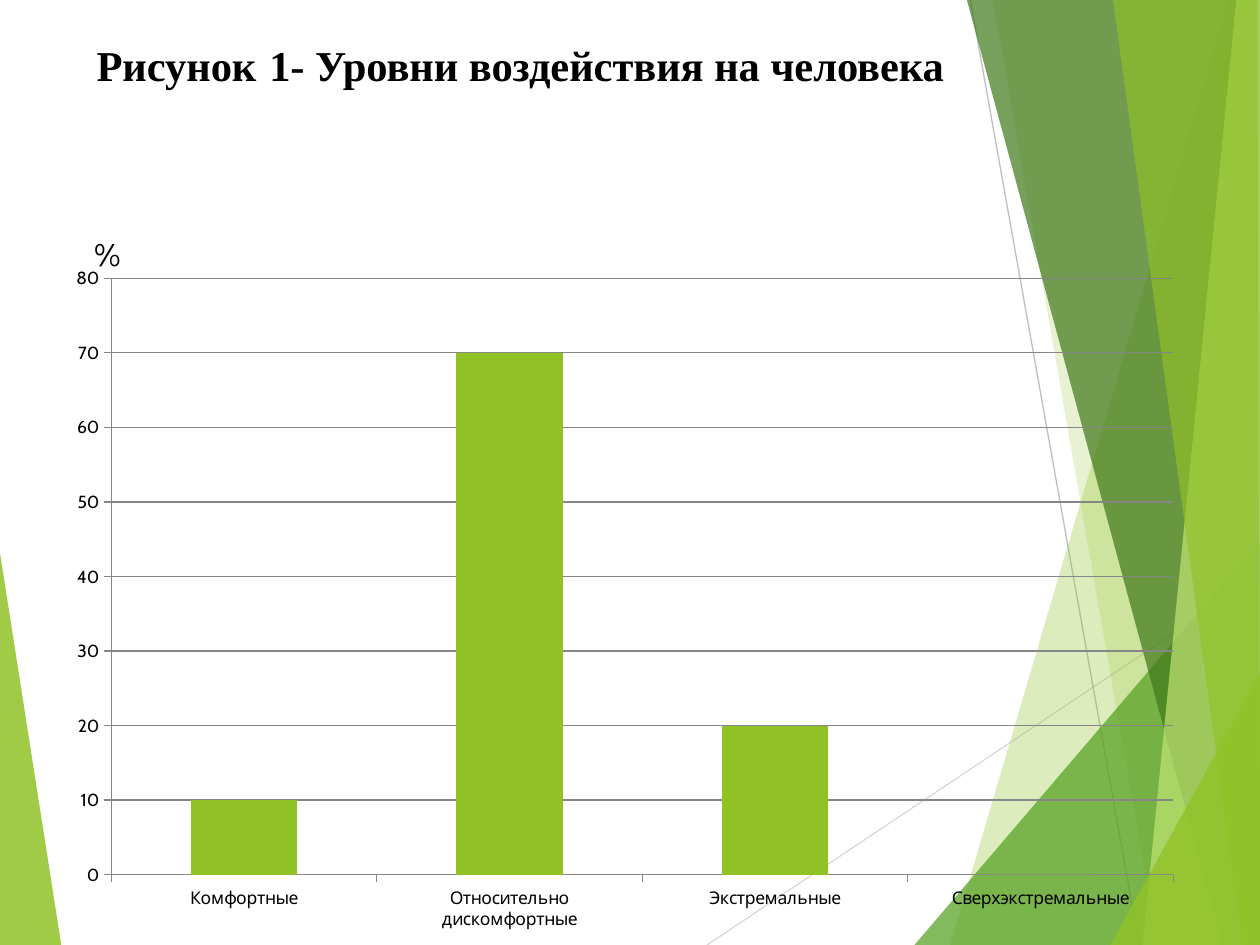
from lxml import etree
from pptx import Presentation
from pptx.chart.data import CategoryChartData
from pptx.dml.color import RGBColor
from pptx.enum.chart import XL_CHART_TYPE, XL_TICK_MARK
from pptx.enum.shapes import MSO_CONNECTOR
from pptx.enum.text import MSO_ANCHOR, MSO_AUTO_SIZE, PP_ALIGN
from pptx.oxml import parse_xml
from pptx.oxml.ns import nsdecls, qn
from pptx.util import Pt

WIDTH, HEIGHT = 720, 540
COLORS = {
    "lime": "90C226",
    "green": "54A021",
    "forest": "3F7819",
    "pale": "C0E474",
    "light_gray": "D9D9D9",
    "mid_gray": "BFBFBF",
    "axis": "868686",
    "text": "000000",
}

# Facets from back to front: corner points, colour, opacity in percent
LEFT_FACET = ([(0, 316), (35, HEIGHT), (0, HEIGHT)], "lime", 85)
RIGHT_FACETS = [
    ([(702, 0), (543, HEIGHT), (WIDTH, HEIGHT), (WIDTH, 0)], "lime", 30),
    ([(567.5, 0), (661.5, HEIGHT), (WIDTH, HEIGHT), (WIDTH, 0)], "lime", 20),
    ([(522.5, HEIGHT), (WIDTH, 309), (WIDTH, HEIGHT)], "green", 72),
    ([(552.5, 0), (698.5, HEIGHT), (WIDTH, HEIGHT), (WIDTH, 0)], "forest", 70),
    ([(706.5, 0), (653, HEIGHT), (WIDTH, HEIGHT), (WIDTH, 0)], "pale", 70),
    ([(636, 0), (710, HEIGHT), (WIDTH, HEIGHT), (718.5, 0)], "lime", 65),
    ([(634.5, HEIGHT), (WIDTH, 385), (WIDTH, HEIGHT)], "lime", 80),
]
RAYS = [
    ((404, HEIGHT), (WIDTH, 329), "light_gray"),
    ((554.5, 0), (651, HEIGHT), "mid_gray"),
]

TITLE_RUNS = [
    ("Рисунок", "Times New Roman", 24.3, "text", True),
    (" ", "Cabin", 32.4, "lime", False),
    ("1- Уровни воздействия на человека", "Times New Roman", 24.3, "text", True),
]
LEVELS = {
    "Комфортные": 10,
    "Относительно дискомфортные": 70,
    "Экстремальные": 20,
    "Сверхэкстремальные": 0,
}


def color(name):
    return RGBColor.from_string(COLORS[name])


def style_font(font, name, size, color_name, bold=False):
    font.name = name
    font.size = Pt(size)
    font.bold = bold
    font.color.rgb = color(color_name)


def add_facet(slide, points, color_name, opacity):
    corners = [(Pt(x), Pt(y)) for x, y in points]
    builder = slide.shapes.build_freeform(*corners[0])
    builder.add_line_segments(corners[1:], close=True)
    shape = builder.convert_to_shape()
    shape.shadow.inherit = False
    shape.line.fill.background()
    shape.fill.solid()
    shape.fill.fore_color.rgb = color(color_name)
    fill_color = shape.fill._xPr.find(qn("a:solidFill"))[0]
    etree.SubElement(fill_color, qn("a:alpha"), val=str(opacity * 1000))


def add_ray(slide, start, end, color_name):
    points = [Pt(value) for value in start + end]
    connector = slide.shapes.add_connector(MSO_CONNECTOR.STRAIGHT, *points)
    connector.line.color.rgb = color(color_name)
    connector.line.width = Pt(0.75)
    etree.SubElement(connector._element.spPr, qn("a:effectLst"))


def format_title(title):
    title.left, title.top, title.width, title.height = Pt(48), Pt(9), Pt(588), Pt(90)
    text_frame = title.text_frame
    text_frame.word_wrap = True
    text_frame.auto_size = MSO_AUTO_SIZE.NONE
    text_frame.vertical_anchor = MSO_ANCHOR.TOP
    text_frame.margin_top = Pt(5)
    paragraph = text_frame.paragraphs[0]
    paragraph.alignment = PP_ALIGN.LEFT
    for text, font_name, size, color_name, bold in TITLE_RUNS:
        run = paragraph.add_run()
        run.text = text
        style_font(run.font, font_name, size, color_name, bold)


def manual_layout(inner=False, **fractions):
    """Return a chart layout placed by fractions of the chart's size."""
    target = '<c:layoutTarget val="inner"/>' if inner else ""
    modes = '<c:xMode val="edge"/><c:yMode val="edge"/>'
    values = "".join(f'<c:{key} val="{value}"/>' for key, value in fractions.items())
    return parse_xml(
        f'<c:layout {nsdecls("c")}><c:manualLayout>{target}{modes}{values}'
        "</c:manualLayout></c:layout>"
    )


def format_axis(axis):
    axis.major_tick_mark = XL_TICK_MARK.OUTSIDE
    axis.minor_tick_mark = XL_TICK_MARK.NONE
    axis.format.line.color.rgb = color("axis")
    axis.format.line.width = Pt(0.75)
    style_font(axis.tick_labels.font, "Cabin", 10, "text")


def add_level_chart(slide):
    data = CategoryChartData()
    data.categories = list(LEVELS)
    data.add_series("%", list(LEVELS.values()))
    chart = slide.shapes.add_chart(
        XL_CHART_TYPE.COLUMN_STACKED, Pt(31), Pt(99), Pt(652.5), Pt(441), data
    ).chart
    chart.has_legend = False
    style_font(chart.font, "Cabin", 10, "text")

    chart.has_title = True
    title = chart.chart_title
    title.include_in_layout = False
    title.text_frame.text = "%"
    style_font(title.text_frame.paragraphs[0].runs[0].font, "Cabin", 18, "text")
    for old in title._element.findall(qn("c:layout")):
        title._element.remove(old)
    title._element.find(qn("c:tx")).addnext(manual_layout(x=0.03, y=0.07))

    plot_area = chart._chartSpace.chart.plotArea
    for old in plot_area.findall(qn("c:layout")):
        plot_area.remove(old)
    plot_area.insert(0, manual_layout(inner=True, x=0.05, y=0.136, w=0.93, h=0.773))

    format_axis(chart.category_axis)
    value_axis = chart.value_axis
    format_axis(value_axis)
    value_axis.minimum_scale, value_axis.maximum_scale = 0, 80
    value_axis.major_unit = 10
    value_axis.has_major_gridlines = True
    value_axis.major_gridlines.format.line.color.rgb = color("axis")
    value_axis.major_gridlines.format.line.width = Pt(0.75)

    plot = chart.plots[0]
    plot.gap_width, plot.overlap = 150, 100
    plot.vary_by_categories = False
    fill = plot.series[0].format.fill
    fill.solid()
    fill.fore_color.rgb = color("lime")


def main():
    presentation = Presentation()
    presentation.slide_width, presentation.slide_height = Pt(WIDTH), Pt(HEIGHT)
    slide = presentation.slides.add_slide(presentation.slide_layouts[5])
    add_facet(slide, *LEFT_FACET)
    for ray in RAYS:
        add_ray(slide, *ray)
    for facet in RIGHT_FACETS:
        add_facet(slide, *facet)
    format_title(slide.shapes.title)
    add_level_chart(slide)
    presentation.save("out.pptx")


if __name__ == "__main__":
    main()
